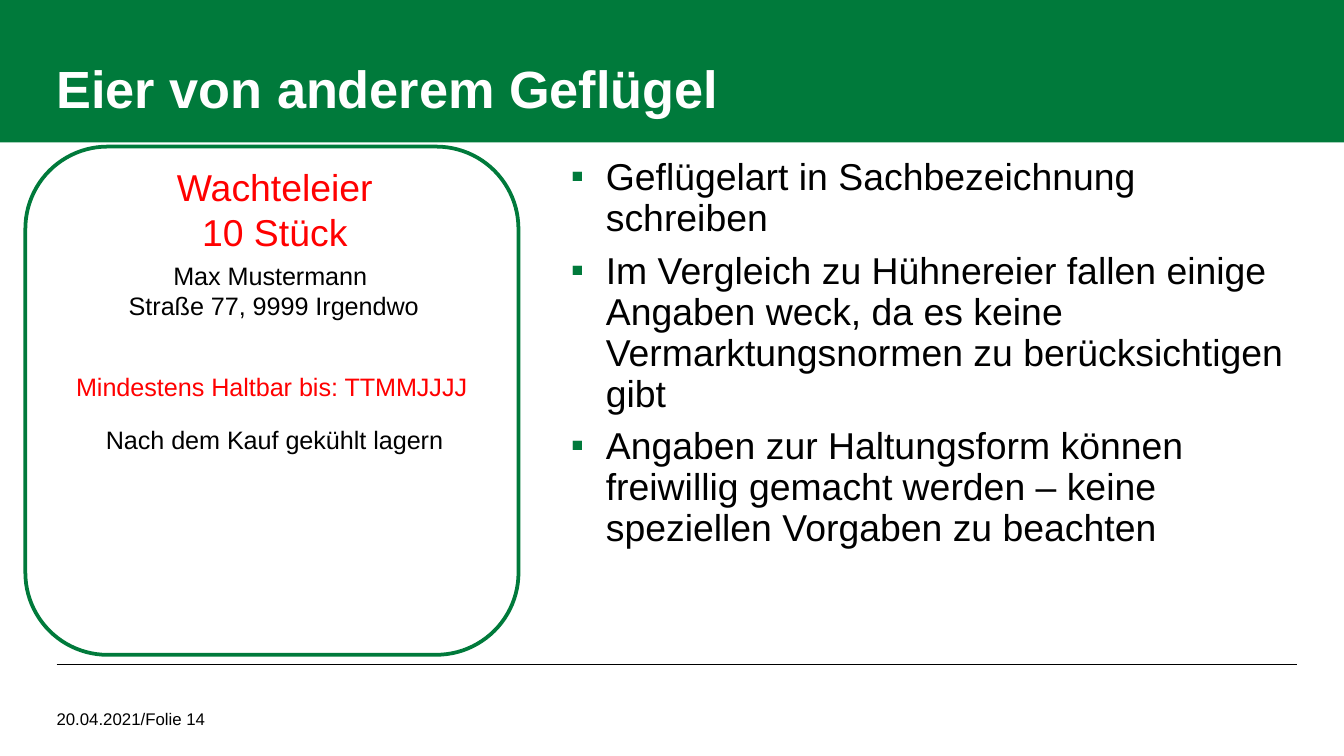
from lxml import etree
from pptx import Presentation
from pptx.dml.color import RGBColor
from pptx.enum.shapes import MSO_CONNECTOR, MSO_SHAPE
from pptx.enum.text import MSO_ANCHOR, MSO_AUTO_SIZE, PP_ALIGN
from pptx.oxml.ns import qn
from pptx.util import Cm, Pt

LEFT, CENTER = PP_ALIGN.LEFT, PP_ALIGN.CENTER
TOP, MIDDLE, BOTTOM = MSO_ANCHOR.TOP, MSO_ANCHOR.MIDDLE, MSO_ANCHOR.BOTTOM
NO_AUTOFIT = MSO_AUTO_SIZE.NONE
STRAIGHT = MSO_CONNECTOR.STRAIGHT
ROUNDED = MSO_SHAPE.ROUNDED_RECTANGLE

FONT = "Arial"
GREEN, RED, BLACK, WHITE = "007A3B", "FF0000", "000000", "FFFFFF"
DEFAULT_INSETS = (0.25, 0.13, 0.25, 0.13)
NO_INSETS = (0, 0, 0, 0)


def color(hex_text):
    return RGBColor.from_string(hex_text)


def place(shape, box):
    shape.left, shape.top, shape.width, shape.height = (Cm(v) for v in box)


def set_frame(shape, insets, anchor=TOP, wrap=True):
    frame = shape.text_frame
    frame.auto_size = NO_AUTOFIT
    frame.word_wrap = wrap
    frame.vertical_anchor = anchor
    (frame.margin_left, frame.margin_top,
     frame.margin_right, frame.margin_bottom) = (Cm(v) for v in insets)
    return frame


def style(para, size, ink, align=LEFT, spacing=None, bold=False):
    para.alignment = align
    para.space_before = Pt(0)
    if spacing is not None:
        para.line_spacing = spacing
    for span in para.runs:
        span.font.name = FONT
        span.font.size = Pt(size)
        span.font.bold = bold
        span.font.color.rgb = color(ink)


def add_bullet(para, sign, ink):
    props = para._p.get_or_add_pPr()
    props.set("marL", str(Cm(0.81)))
    props.set("indent", str(Cm(-0.66)))
    bullet_color = etree.SubElement(props, qn("a:buClr"))
    etree.SubElement(bullet_color, qn("a:srgbClr"), val=ink)
    etree.SubElement(props, qn("a:buFont"), typeface=FONT)
    etree.SubElement(props, qn("a:buChar"), char=sign)


def add_text(page, box, text, size, ink, align=CENTER, spacing=None,
             insets=DEFAULT_INSETS, anchor=TOP, wrap=True):
    shape = page.shapes.add_textbox(*(Cm(v) for v in box))
    frame = set_frame(shape, insets, anchor, wrap)
    frame.text = text
    for para in frame.paragraphs:
        style(para, size, ink, align, spacing)


def fill_title(page, box, text):
    title = page.shapes.title
    place(title, box)
    title.fill.solid()
    title.fill.fore_color.rgb = color(GREEN)
    frame = set_frame(title, (1.07, 0.51, 1.07, 0.41), BOTTOM)
    frame.text = text
    style(frame.paragraphs[0], 28, WHITE, spacing=0.95, bold=True)


def fill_list(page, box, items):
    body = page.placeholders[1]
    place(body, box)
    frame = set_frame(body, NO_INSETS)
    frame.text = "\n".join(items)
    for para in frame.paragraphs:
        add_bullet(para, "▪", GREEN)
        style(para, 20, BLACK, spacing=Pt(22))
        para.space_after = Pt(6)


def add_label(page, box):
    """Egg carton label: rounded frame with its lines of text."""
    left, top, width, height = box
    card = page.shapes.add_shape(ROUNDED, *(Cm(v) for v in box))
    card.shadow.inherit = False
    card.fill.solid()
    card.fill.fore_color.rgb = color(WHITE)
    card.line.color.rgb = color(GREEN)
    card.line.width = Pt(2)

    add_text(page, (left + 0.36, top + 0.2, width - 0.61, 1.96),
             "Wachteleier\n10 Stück", 20, RED)
    add_text(page, (left + 0.86, top + 2.01, width - 1.65, 1.42),
             "Max Mustermann \nStraße 77, 9999 Irgendwo", 13.5, BLACK)
    add_text(page, (left + 0.71, top + 3.48, width - 1.32, 1.27),
             "Mindestens Haltbar bis: TTMMJJJJ", 13.5, RED,
             align=LEFT, spacing=Pt(34), wrap=False)
    add_text(page, (left + 1.22, top + 5.11, width - 2.34, 0.84),
             "Nach dem Kauf gekühlt lagern", 13.5, BLACK, wrap=False)


def add_footer(page, box, text):
    """Thin rule across the page with the date line below it."""
    left, top, width, height = box
    rule = page.shapes.add_connector(
        STRAIGHT, Cm(left), Cm(top), Cm(left + width), Cm(top))
    rule.line.color.rgb = color(BLACK)
    rule.line.width = Pt(0.5)
    etree.SubElement(rule._element.spPr, qn("a:effectLst"))
    add_text(page, (left, top + 0.53, 13.61, height - 0.53), text, 9, BLACK,
             align=LEFT, spacing=Pt(12), insets=NO_INSETS, anchor=MIDDLE)


def main():
    deck = Presentation()
    deck.slide_width, deck.slide_height = Cm(25.4), Cm(14.28)
    page = deck.slides.add_slide(deck.slide_layouts[1])

    fill_title(page, (0, 0, 25.4, 2.69), "Eier von anderem Geflügel")
    fill_list(page, (10.64, 2.97, 13.69, 9.4), [
        "Geflügelart in Sachbezeichnung schreiben",
        "Im Vergleich zu Hühnereier fallen einige Angaben weck, da es keine "
        "Vermarktungsnormen zu berücksichtigen gibt",
        "Angaben zur Haltungsform können freiwillig gemacht werden – keine "
        "speziellen Vorgaben zu beachten",
    ])
    add_footer(page, (1.07, 12.55, 23.44, 1.5), "20.04.2021/Folie 14")
    add_label(page, (0.48, 2.77, 9.32, 9.6))

    deck.save("out.pptx")


if __name__ == "__main__":
    main()
